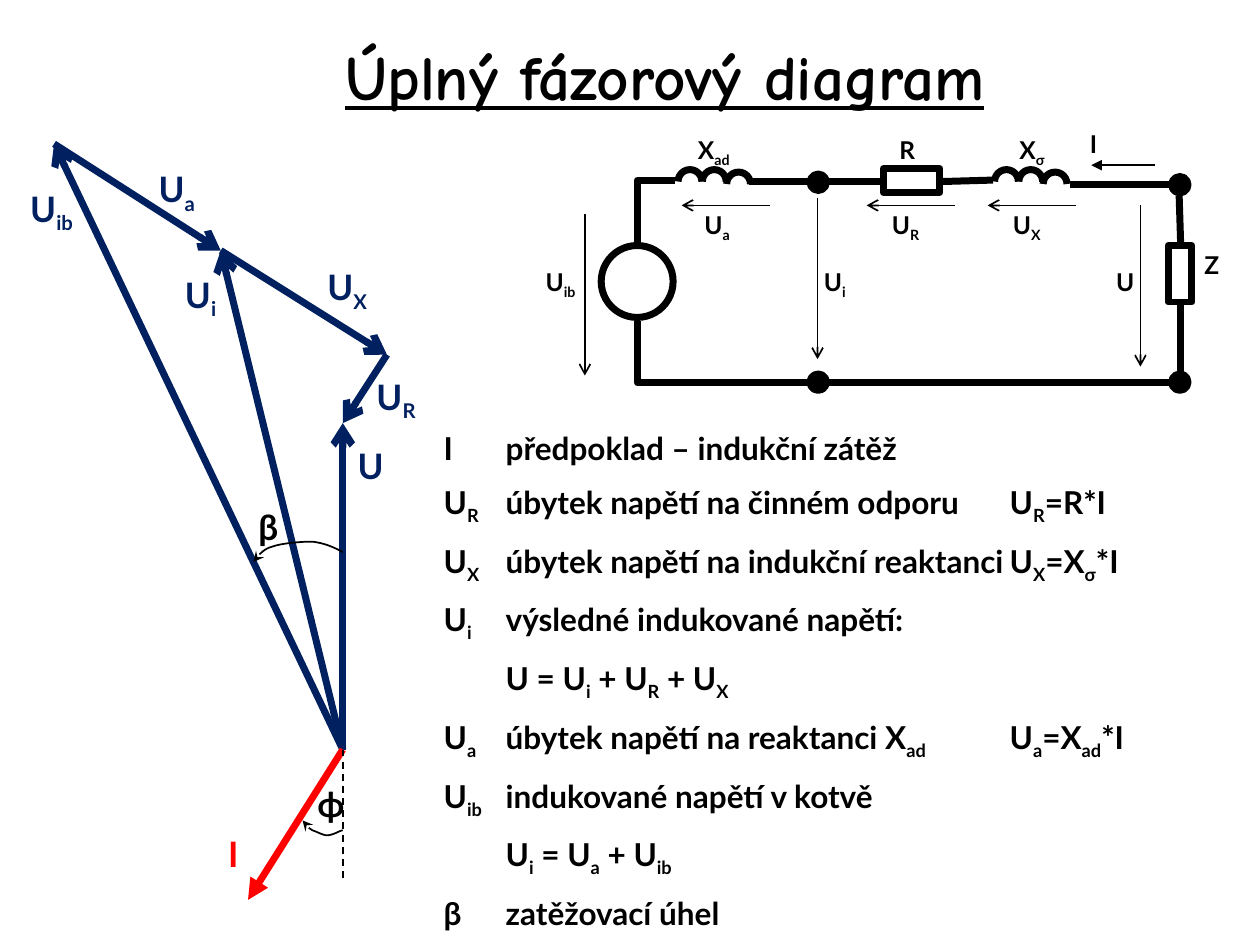
from dataclasses import dataclass

from lxml import etree
from pptx import Presentation
from pptx.dml.color import RGBColor
from pptx.enum.dml import MSO_LINE
from pptx.enum.shapes import MSO_CONNECTOR, MSO_SHAPE
from pptx.enum.text import MSO_ANCHOR, MSO_AUTO_SIZE, PP_ALIGN
from pptx.oxml.ns import qn
from pptx.util import Cm, Pt

LINE = MSO_CONNECTOR.STRAIGHT
ARC, OVAL, RECT = MSO_SHAPE.ARC, MSO_SHAPE.OVAL, MSO_SHAPE.RECTANGLE
TOP, MIDDLE = MSO_ANCHOR.TOP, MSO_ANCHOR.MIDDLE
FIT, FIXED = MSO_AUTO_SIZE.SHAPE_TO_FIT_TEXT, MSO_AUTO_SIZE.NONE
DASH = MSO_LINE.DASH
CENTER = PP_ALIGN.CENTER


@dataclass(frozen=True)
class Theme:
    black: RGBColor = RGBColor(0, 0, 0)
    navy: RGBColor = RGBColor(0x00, 0x20, 0x60)
    red: RGBColor = RGBColor(0xFF, 0, 0)
    head: str = "Comic Neue"
    text: str = "Lato"
    title: int = 36
    phasor: int = 20
    body: int = 18
    small: int = 14
    thin: int = 1
    thick: int = 4


T = Theme()

TERMS = [
    "I\tpředpoklad – indukční zátěž",
    "U_R_\túbytek napětí na činném odporu\tU_R_=R*I",
    "U_X_\túbytek napětí na indukční reaktanci\tU_X_=X_σ_*I",
    "U_i_\tvýsledné indukované napětí:",
    "\tU = U_i_ + U_R_ + U_X_",
    "U_a_\túbytek napětí na reaktanci X_ad_\tU_a_=X_ad_*I",
    "U_ib_\tindukované napětí v kotvě",
    "\tU_i_ = U_a_ + U_ib_",
    "β\tzatěžovací úhel",
]


def apply(obj, values):
    for name, value in values.items():
        setattr(obj, name, value)


def place(shape, *box):
    apply(shape, dict(zip(("left", "top", "width", "height"), map(Cm, box))))


def write(para, text, size, color, font=T.text, **extra):
    """Fill a paragraph; the pieces between underscores become subscripts."""
    for i, piece in enumerate(text.split("_")):
        if piece:
            run = para.add_run()
            run.text = piece
            apply(run.font, {"size": Pt(size), "name": font, "bold": True, **extra})
            run.font.color.rgb = color
            if i % 2:
                run.font._element.set("baseline", "-25000")


def space(para):
    """Set half a line before the paragraph and remove its bullet."""
    props = para._p.get_or_add_pPr()
    before = etree.SubElement(props, qn("a:spcBef"))
    etree.SubElement(before, qn("a:spcPct")).set("val", "50000")
    etree.SubElement(props, qn("a:buNone"))
    return props


def label(shapes, text, x, y, w, size=T.small, color=T.black, anchor=TOP):
    high = 0.8 if size == T.small else 1.05
    frame = shapes.add_textbox(Cm(x), Cm(y), Cm(w), Cm(high)).text_frame
    apply(frame, {"word_wrap": False, "auto_size": FIT, "vertical_anchor": anchor})
    apply(frame, {f"margin_{side}": Cm(0.1)
                  for side in ("left", "right", "top", "bottom")})
    para = frame.paragraphs[0]
    space(para)
    write(para, text, size, color)


def stroke(shape, width, color=T.black, tip=None, dash=None):
    shape.line.width = Pt(width)
    shape.line.color.rgb = color
    if dash:
        shape.line.dash_style = dash
    if tip:
        etree.SubElement(shape.get_or_add_ln(), qn("a:tailEnd")).set("type", tip)


def line(shapes, start, end, width=T.thick, **style):
    wire = shapes.add_connector(LINE, *map(Cm, (*start, *end)))
    stroke(wire, width, **style)
    etree.SubElement(wire._element.spPr, qn("a:effectLst"))


def outline(shapes, points, width, **style):
    spots = [(Cm(x), Cm(y)) for x, y in points]
    pen = shapes.build_freeform(*spots[0])
    pen.add_line_segments(spots[1:], close=False)
    shape = pen.convert_to_shape()
    shape.fill.background()
    stroke(shape, width, **style)
    shape.shadow.inherit = False


def curve(shapes, knots):
    """Draw joined cubic curves, each with two control points, with an arrowhead."""
    points, steps = [knots[0]], 8
    for i in range(0, len(knots) - 1, 3):
        for t in (k / steps for k in range(1, steps + 1)):
            u = 1 - t
            mix = (u**3, 3 * u * u * t, 3 * u * t * t, t**3)
            points.append(tuple(sum(m * p[axis] for m, p in zip(mix, knots[i:i + 4]))
                                for axis in (0, 1)))
    outline(shapes, points, T.thin, tip="stealth")


def symbol(shapes, kind, x, y, w, h, solid=False):
    shape = shapes.add_shape(kind, *map(Cm, (x, y, w, h)))
    shape.shadow.inherit = False
    if solid:
        shape.fill.solid()
        shape.fill.fore_color.rgb = T.black
    else:
        shape.fill.background()
    stroke(shape, T.thick)
    return shape


def coil(shapes, x, y):
    """Draw three half circles, the first one centred on x, y."""
    r = 0.24
    for i, drop in enumerate((0, 0, 0.05)):
        turn = symbol(shapes, ARC, x + 0.49 * i - r, y + drop - r, 2 * r, 2 * r)
        turn.adjustments[0], turn.adjustments[1] = 108, 0


def circuit(shapes):
    for x, y in ((16.48, 3.99), (11.79, 4.32), (22.99, 4.14)):
        line(shapes, (x, y), (x, y + 3.25), T.thin, tip="arrow")
    for x in (15.52, 19.25, 21.69):
        line(shapes, (x, 4.14), (x - 1.78, 4.14), T.thin, tip="arrow")
    line(shapes, (23.29, 3.33), (22, 3.33), T.thin, tip="triangle")

    for item in (
        ("U_ib", 10.9, 5.28, 0.89), ("U_i", 16.51, 5.28, 0.66), ("U", 22.4, 5.28, 0.56),
        ("U_a", 14.1, 4.14, 0.76), ("U_R", 17.88, 4.14, 0.81), ("U_X", 20.32, 4.14, 0.81),
        ("X_ad", 13.97, 2.62, 0.97), ("R", 18.03, 2.62, 0.56), ("X_σ", 20.45, 2.62, 0.74),
        ("Z", 24.18, 4.95, 0.51), ("I", 21.87, 2.51, 0.43),
    ):
        label(shapes, *item)

    symbol(shapes, OVAL, 12.12, 4.95, 1.45, 1.45)
    symbol(shapes, RECT, 17.81, 3.4, 1.14, 0.48)
    symbol(shapes, RECT, 23.55, 4.95, 0.48, 1.14)
    for x, y in ((16.33, 3.51), (23.62, 3.56), (16.33, 7.54), (23.62, 7.54)):
        symbol(shapes, OVAL, x, y, 0.33, 0.33, solid=True)
    for x in (13.91, 20.29):
        coil(shapes, x, 3.66)

    for start, end in (
        ((15.09, 3.66), (16.28, 3.66)), ((16.71, 3.66), (17.73, 3.66)),
        ((18.97, 3.66), (20.02, 3.63)), ((21.56, 3.71), (23.57, 3.71)),
        ((16.71, 7.72), (23.57, 7.72)), ((23.77, 3.94), (23.8, 4.9)),
        ((23.8, 6.15), (23.8, 7.49)),
    ):
        line(shapes, start, end)
    outline(shapes, [(12.85, 4.9), (12.85, 3.63), (13.61, 3.63)], T.thick)
    outline(shapes, [(12.85, 6.48), (12.85, 7.72), (16.28, 7.72)], T.thick)


def phasors(shapes):
    base, load, drop = (6.91, 15.11), (6.91, 8.53), (7.8, 7.15)
    inner, outer = (4.45, 5.05), (1.09, 2.9)
    for start, end in ((base, load), (drop, load), (inner, drop),
                       (base, inner), (outer, inner), (base, outer)):
        line(shapes, start, end, color=T.navy, tip="arrow")
    line(shapes, base, (5, 18.14), color=T.red, tip="triangle")
    line(shapes, base, (6.91, 17.73), T.thin, dash=DASH)
    curve(shapes, [(6.91, 11.13), (6.71, 11.02), (6.53, 10.95), (6.3, 10.92),
                   (6.07, 10.92), (5.69, 10.95), (5.49, 11.02),
                   (5.28, 11.07), (5.18, 11.25), (5.11, 11.33)])
    curve(shapes, [(6.91, 16.74), (6.86, 16.74), (6.71, 16.84), (6.6, 16.84),
                   (6.5, 16.84), (6.38, 16.76), (6.3, 16.74),
                   (6.22, 16.69), (6.12, 16.61), (6.1, 16.54)])
    for color, *item in (
        (T.red, "I", 4.5, 16.69, 0.53), (T.navy, "U", 7.11, 8.86, 0.71),
        (T.navy, "U_R", 7.49, 7.52, 1.07), (T.navy, "U_X", 6.5, 5.31, 1.04),
        (T.navy, "U_i", 3.63, 5.46, 0.86), (T.navy, "U_a", 3.1, 3.33, 1.02),
        (T.navy, "U_ib", 0.51, 3.73, 1.17), (T.black, "β", 5.11, 10.08, 0.58),
        (T.black, "ϕ", 6.3, 15.67, 0.64),
    ):
        label(shapes, *item, T.phasor, color, MIDDLE)


def heading(shape):
    place(shape, 5.49, 0.53, 15.82, 1.96)
    apply(shape.text_frame, {"vertical_anchor": MIDDLE, "auto_size": FIXED})
    para = shape.text_frame.paragraphs[0]
    para.alignment = CENTER
    write(para, "Úplný fázorový diagram", T.title, T.black, T.head, underline=True)


def terms(shape):
    place(shape, 8.69, 8.53, 16.41, 10.19)
    frame = shape.text_frame
    apply(frame, {"vertical_anchor": TOP, "auto_size": FIXED, "word_wrap": True})
    for i, text in enumerate(TERMS):
        para = frame.add_paragraph() if i else frame.paragraphs[0]
        props = space(para)
        for name, size in {"marL": 1.25, "indent": -1.25, "defTabSz": 2.54}.items():
            props.set(name, str(int(Cm(size))))
        write(para, text, T.body, T.black)


def main():
    deck = Presentation()
    apply(deck, {"slide_width": Cm(25.4), "slide_height": Cm(19.05)})
    slide = deck.slides.add_slide(deck.slide_layouts[1])
    heading(slide.shapes.title)
    circuit(slide.shapes)
    phasors(slide.shapes)
    terms(slide.placeholders[1])
    deck.save("out.pptx")


if __name__ == "__main__":
    main()
